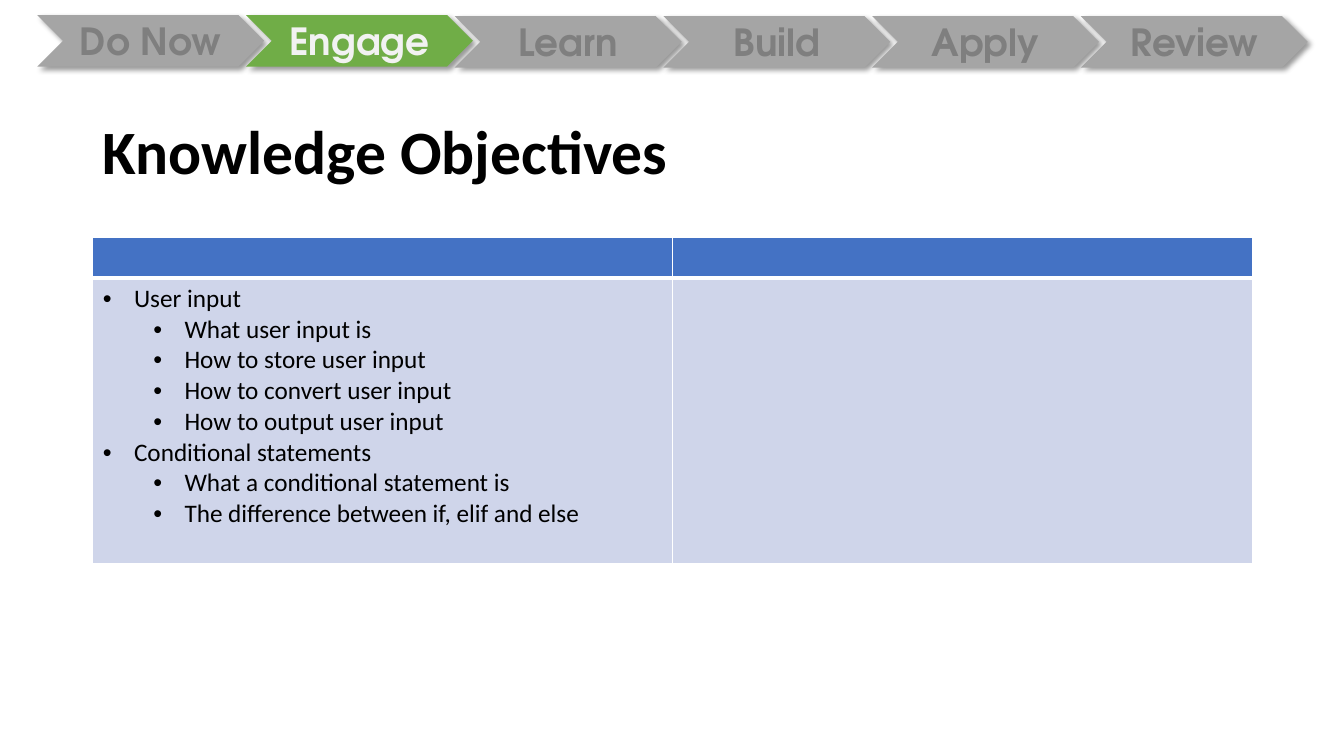
from lxml import etree
from pptx import Presentation
from pptx import util as u
from pptx.dml.color import RGBColor
from pptx.enum import shapes, text
from pptx.oxml import ns

COLORS = {"grey": "A5A5A5", "grey_text": "7F7F7F", "green": "70AD47",
          "light_text": "F2F2F2", "black": "000000", "white": "FFFFFF",
          "header": "4472C4", "body": "CFD5EA"}


def sub(parent, tag, **attrs):
    el = etree.SubElement(parent, ns.qn(tag))
    for name, value in attrs.items():
        el.set(name, str(value))
    return el


class SlideBuilder:
    body_font = "Calibri"
    step_font = "TeX Gyre Adventor"

    def __init__(self, prs):
        self.slide = prs.slides.add_slide(prs.slide_layouts[6])

    def color(self, name):
        return RGBColor.from_string(COLORS[name])

    def style(self, p, font, size, color, bold=False):
        for r in p.runs:
            r.font.name, r.font.size, r.font.bold = font, u.Pt(size), bold
            r.font.color.rgb = self.color(color)

    def chevron(self, label, left, top, fill, color):
        sp = self.slide.shapes.add_shape(
            shapes.MSO_SHAPE.CHEVRON, u.Inches(left), u.Inches(top),
            u.Inches(2.25), u.Inches(0.51))
        sp.adjustments[0] = 0.5
        sp.fill.solid()
        sp.fill.fore_color.rgb = self.color(fill)
        sp.line.fill.background()
        sp.shadow.inherit = False
        effects = sp._element.spPr.find(ns.qn("a:effectLst"))
        shadow = sub(effects, "a:outerShdw", blurRad=u.Pt(4), dist=u.Pt(3),
                     dir=45 * 60000, algn="tl", rotWithShape=0)
        sub(sub(shadow, "a:srgbClr", val=COLORS["black"]), "a:alpha", val=40000)
        tf = sp.text_frame
        tf.text = label
        tf.vertical_anchor = text.MSO_ANCHOR.MIDDLE
        p = tf.paragraphs[0]
        p.alignment = text.PP_ALIGN.CENTER
        self.style(p, self.step_font, 26.7, color, True)

    def title(self, words):
        tf = self.slide.shapes.add_textbox(
            u.Inches(0.92), u.Inches(0.81), u.Inches(11.5), u.Inches(1.45)).text_frame
        tf.word_wrap = True
        tf.vertical_anchor = text.MSO_ANCHOR.MIDDLE
        tf.text = words
        p = tf.paragraphs[0]
        p.line_spacing = 0.9
        self.style(p, self.body_font, 44, "black", True)

    def cell(self, cell, fill, top, bottom):
        tcPr = cell._tc.get_or_add_tcPr()
        for side, width in (("L", 1), ("R", 1), ("T", top), ("B", bottom)):
            ln = sub(tcPr, f"a:ln{side}", w=u.Pt(width))
            sub(sub(ln, "a:solidFill"), "a:srgbClr", val=COLORS["white"])
        cell.fill.solid()
        cell.fill.fore_color.rgb = self.color(fill)

    def bullets(self, tf, items):
        tf.text = "\n".join(words for _, words in items)
        for p, (level, _) in zip(tf.paragraphs, items):
            p.level = level
            pPr = p._p.get_or_add_pPr()
            pPr.set("marL", str(u.Inches(0.31 + 0.5 * level)))
            pPr.set("indent", str(u.Inches(-0.31)))
            sub(pPr, "a:buFont", typeface="Arial")
            sub(pPr, "a:buChar", char="•")
            self.style(p, self.body_font, 18, "black")

    def table(self, items):
        table = self.slide.shapes.add_table(
            2, 2, u.Inches(0.92), u.Inches(2.36), u.Inches(11.5), u.Inches(3.23)).table
        rows = (("header", 0.4, 1, 3), ("body", 2.83, 3, 1))
        for row, (fill, height, top, bottom) in zip(table.rows, rows):
            row.height = u.Inches(height)
            for cell in row.cells:
                self.cell(cell, fill, top, bottom)
        self.bullets(table.cell(1, 0).text_frame, items)


def main():
    prs = Presentation()
    prs.slide_width, prs.slide_height = u.Inches(13.33), u.Inches(7.5)
    s = SlideBuilder(prs)

    # Lesson steps, with the current one in green
    steps = ["Do Now", "Engage", "Learn", "Build", "Apply", "Review"]
    for i, step in enumerate(steps):
        current = step == "Engage"
        s.chevron(step, 0.37 + 2.07 * i, 0.15 if i < 2 else 0.16,
                  "green" if current else "grey",
                  "light_text" if current else "grey_text")

    # Title
    s.title("Knowledge Objectives")

    # Objectives table, each item with its bullet level
    s.table([(0, "User input"),
             (1, "What user input is"),
             (1, "How to store user input"),
             (1, "How to convert user input"),
             (1, "How to output user input"),
             (0, "Conditional statements"),
             (1, "What a conditional statement is"),
             (1, "The difference between if, elif and else")])

    prs.save("out.pptx")


if __name__ == "__main__":
    main()
